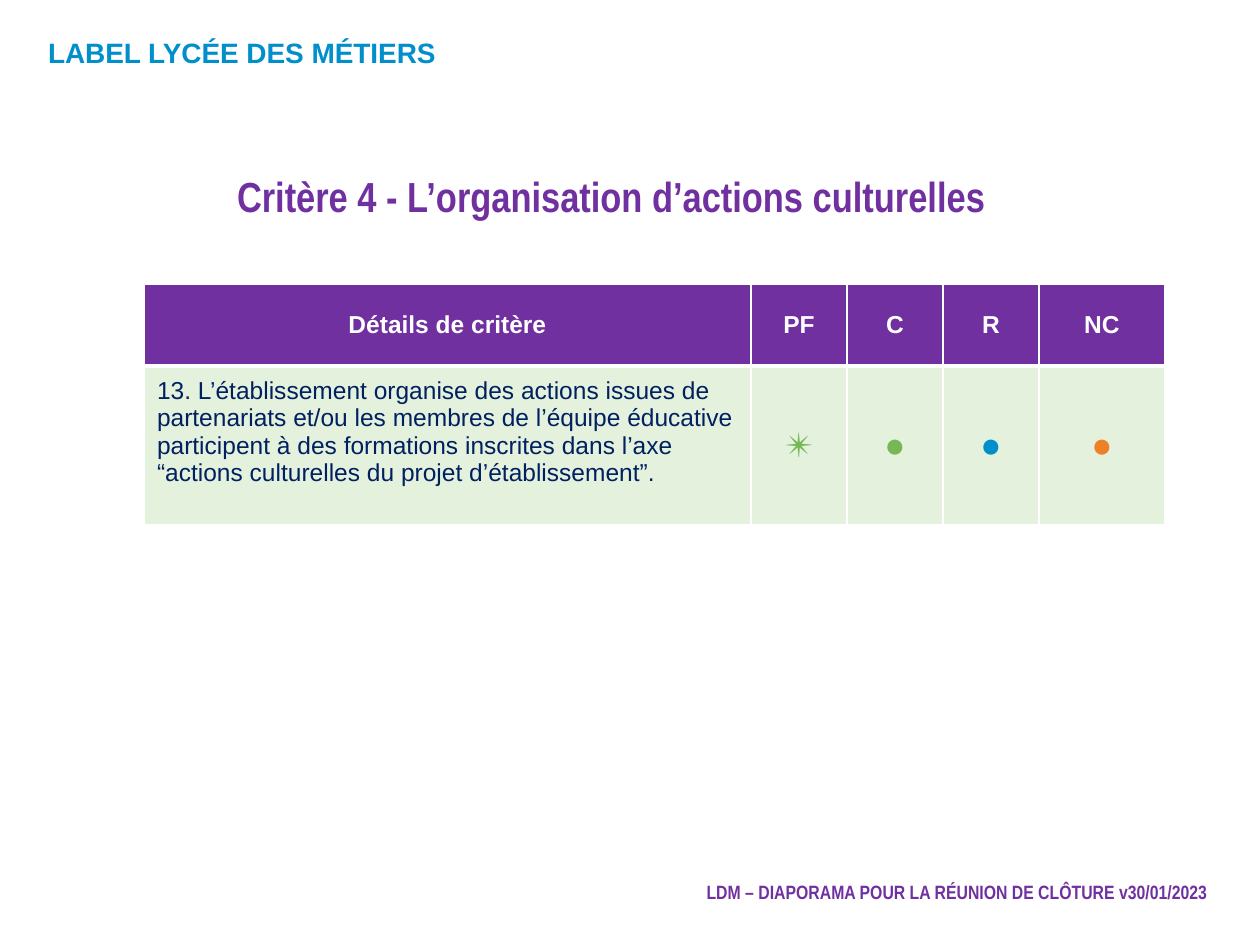
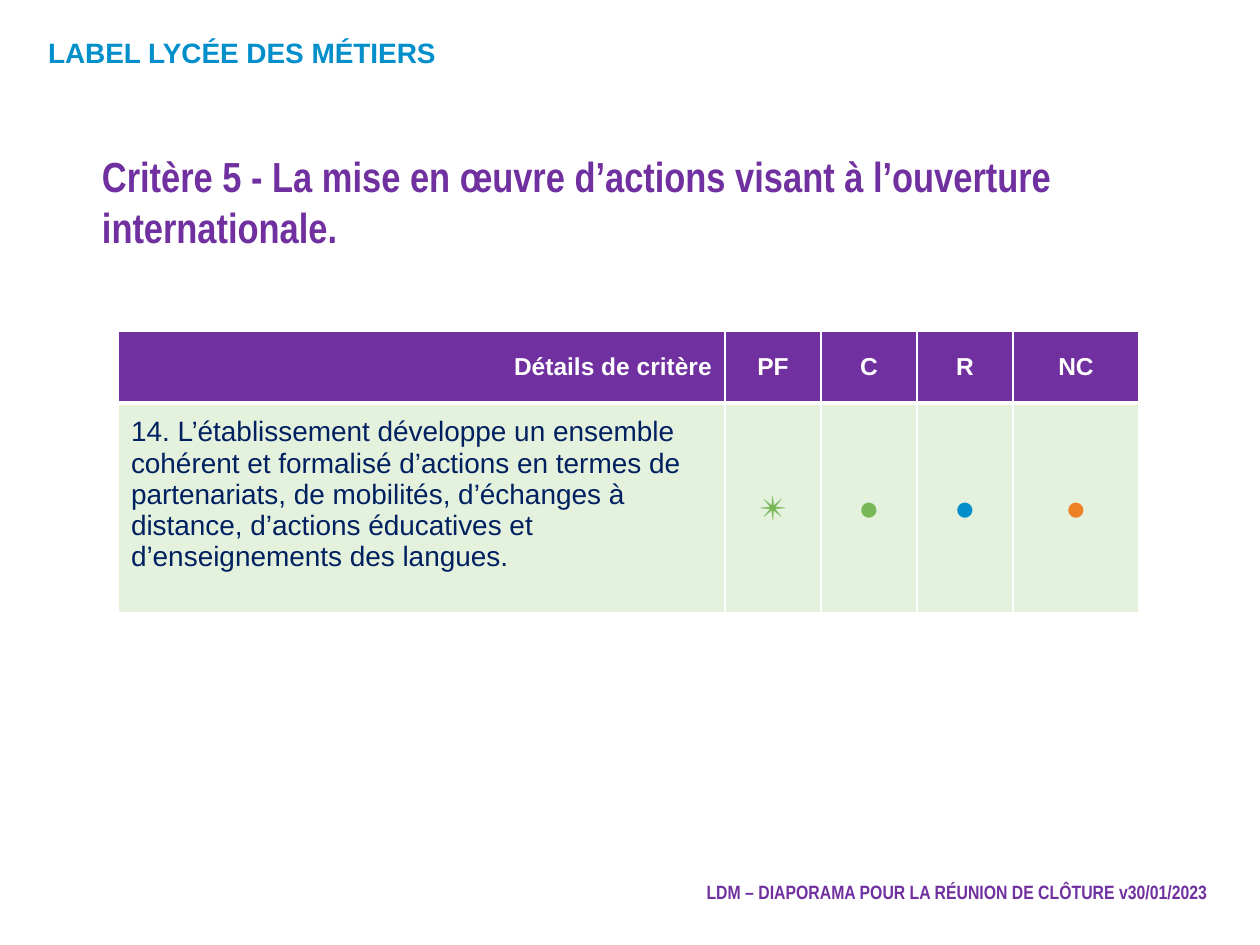
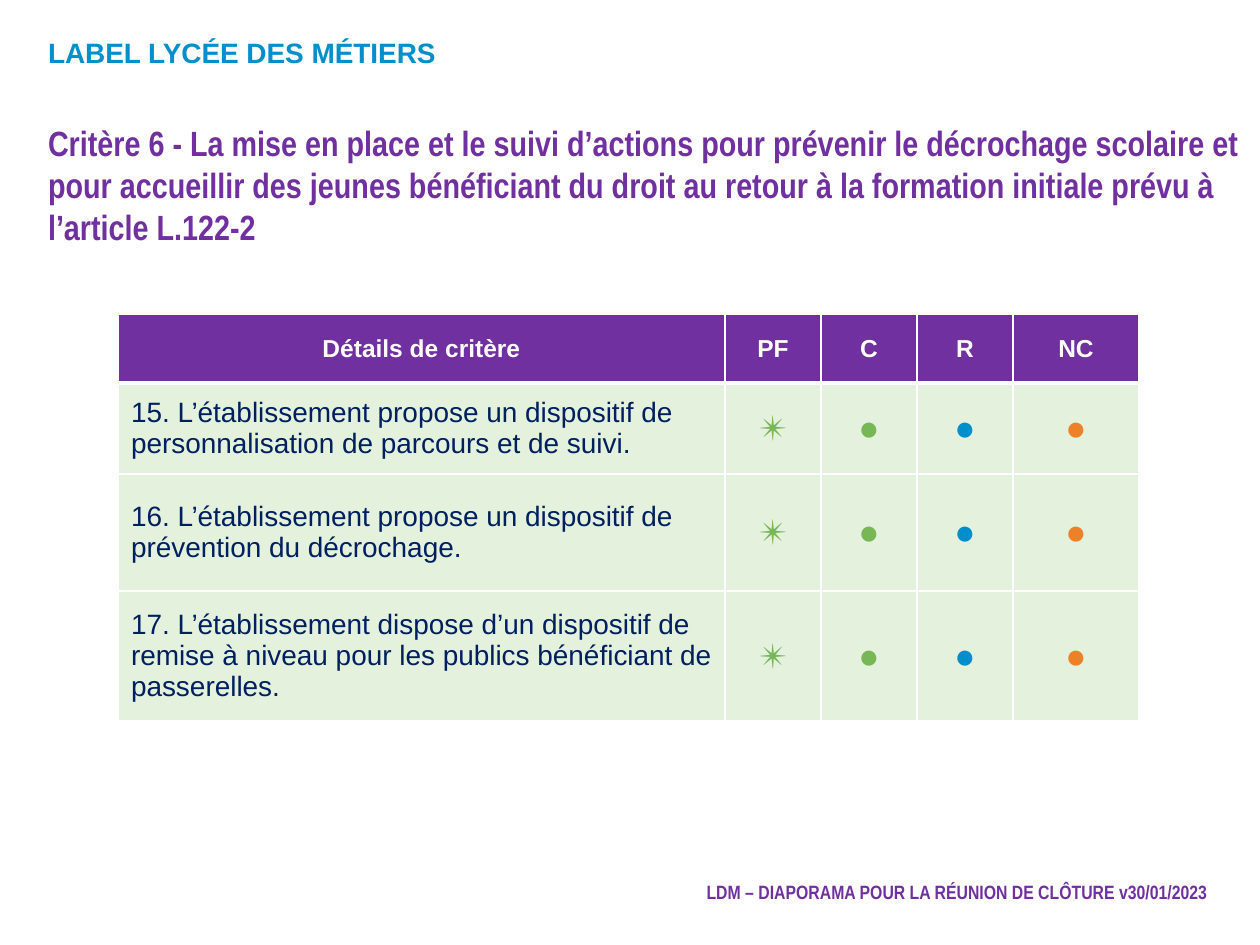
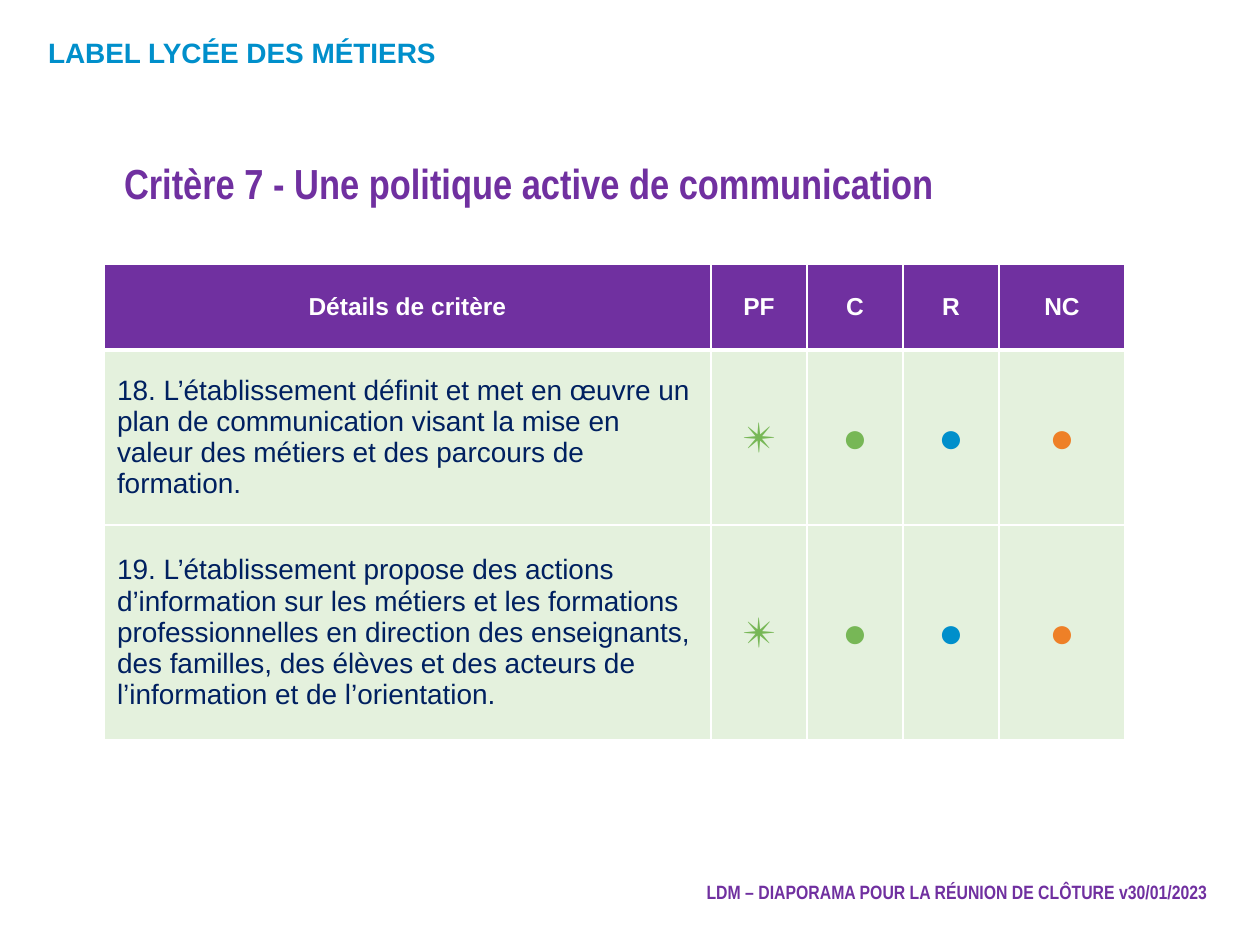
from lxml import etree
from pptx import Presentation
from pptx import util as u
from pptx.dml.color import RGBColor
from pptx.enum import text
from pptx.oxml import ns

# Shared style
PURPLE = RGBColor(0x70, 0x30, 0xA0)
BLUE = RGBColor(0x00, 0x8F, 0xCB)
GREEN = RGBColor(0x77, 0xB7, 0x56)
ORANGE = RGBColor(0xEE, 0x80, 0x27)
NAVY = RGBColor(0x00, 0x20, 0x60)
PALE_GREEN = RGBColor(0xE4, 0xF1, 0xDD)
WHITE = RGBColor(0xFF, 0xFF, 0xFF)

BODY_FONT = "Arial"
NARROW_FONT = "Arial Narrow"
LEFT, CENTER, RIGHT = text.PP_ALIGN.LEFT, text.PP_ALIGN.CENTER, text.PP_ALIGN.RIGHT

PX_PER_INCH = 126
INSET_X, INSET_Y = 13, 6
BRAND = "LABEL LYCÉE DES MÉTIERS"
FOOTER = "LDM – DIAPORAMA POUR LA RÉUNION DE CLÔTURE v30/01/2023"

# Criteria table
COLUMN_WIDTHS = (607, 96, 96, 96, 126)
HEADINGS = ("Détails de critère", "PF", "C", "R", "NC")
RATINGS = (("✴", GREEN), ("●", GREEN), ("●", BLUE), ("●", ORANGE))
THIN, THICK = 1, 3


def px(length):
    return u.Emu(round(length * u.Inches(1) / PX_PER_INCH))


class Deck:
    def __init__(self):
        self.presentation = Presentation()
        self.presentation.slide_width = px(1260)
        self.presentation.slide_height = px(945)
        self.slide = None

    def add_slide(self):
        blank = self.presentation.slide_layouts[6]
        self.slide = self.presentation.slides.add_slide(blank)
        self.label((377, 874, 844, 37), FOOTER, 11, PURPLE, NARROW_FONT, RIGHT)
        self.label((35, 30, 496, 47), BRAND, 16, BLUE)

    def add_text(self, paragraph, words, size, color, font=BODY_FONT, bold=False, align=LEFT):
        paragraph.alignment = align
        run = paragraph.add_run()
        run.text = words
        run.font.name = font
        run.font.size = u.Pt(size)
        run.font.bold = bold
        run.font.color.rgb = color

    def label(self, box, words, size, color, font=BODY_FONT, align=LEFT):
        shape = self.slide.shapes.add_textbox(*map(px, box))
        frame = shape.text_frame
        frame.word_wrap = True
        frame.margin_left = frame.margin_right = px(INSET_X)
        frame.margin_top = frame.margin_bottom = px(INSET_Y)
        self.add_text(frame.paragraphs[0], words, size, color, font, True, align)

    def title(self, box, words, size=24):
        self.label(box, words, size, PURPLE, NARROW_FONT)

    def borders(self, cell, top, bottom):
        properties = cell._tc.get_or_add_tcPr()
        for side, width in (("L", THIN), ("R", THIN), ("T", top), ("B", bottom)):
            line = etree.SubElement(properties, ns.qn(f"a:ln{side}"), w=str(u.Pt(width)))
            fill = etree.SubElement(line, ns.qn("a:solidFill"))
            etree.SubElement(fill, ns.qn("a:srgbClr"), val=str(WHITE))

    def cell(self, cell, lines, size, color, fill, bold=False, align=CENTER,
             top=THIN, bottom=THIN, inset_bottom=INSET_Y):
        self.borders(cell, top, bottom)
        cell.fill.solid()
        cell.fill.fore_color.rgb = fill
        cell.vertical_anchor = text.MSO_ANCHOR.MIDDLE
        cell.margin_left = cell.margin_right = px(INSET_X)
        cell.margin_top, cell.margin_bottom = px(INSET_Y), px(inset_bottom)
        for index, words in enumerate(lines.split("\n")):
            frame = cell.text_frame
            paragraph = frame.add_paragraph() if index else frame.paragraphs[0]
            self.add_text(paragraph, words, size, color, bold=bold, align=align)

    def criteria(self, left, top, heights, details, size=16, rating_size=20,
                 heading_align=CENTER, inset_bottom=INSET_Y):
        table = self.slide.shapes.add_table(
            len(heights), len(COLUMN_WIDTHS), px(left), px(top),
            px(sum(COLUMN_WIDTHS)), px(sum(heights))).table
        table.horz_banding = False
        for column, width in zip(table.columns, COLUMN_WIDTHS):
            column.width = px(width)
        for row, height in zip(table.rows, heights):
            row.height = px(height)

        # Heading row
        for column, heading in enumerate(HEADINGS):
            self.cell(table.cell(0, column), heading, 14, WHITE, PURPLE, True,
                      CENTER if column else heading_align, bottom=THICK)

        # One row per detail, followed by its rating marks
        for row, detail in enumerate(details, 1):
            edge = THICK if row == 1 else THIN
            self.cell(table.cell(row, 0), detail, size, NAVY, PALE_GREEN,
                      align=LEFT, top=edge, inset_bottom=inset_bottom)
            for column, (mark, color) in enumerate(RATINGS, 1):
                self.cell(table.cell(row, column), mark, rating_size, color,
                          PALE_GREEN, top=edge)


def main():
    deck = Deck()

    # Criterion 4
    deck.add_slide()
    deck.criteria(144, 284, (82, 159), [
        "13. L’établissement organise des actions issues de partenariats et/ou les "
        "membres de l’équipe éducative participent à des formations inscrites dans "
        "l’axe “actions culturelles du projet d’établissement”.",
    ], size=14, inset_bottom=33)
    deck.title((224, 165, 1040, 103), "Critère 4 - L’organisation d’actions culturelles")

    # Criterion 5
    deck.add_slide()
    deck.criteria(118, 331, (72, 210), [
        "14. L’établissement développe un ensemble cohérent et formalisé d’actions "
        "en termes de partenariats, de mobilités, d’échanges à distance, d’actions "
        "éducatives et d’enseignements des langues.",
    ], heading_align=RIGHT, inset_bottom=33)
    deck.title((89, 145, 1171, 103),
               "Critère 5 - La mise en œuvre d’actions visant à l’ouverture internationale.")

    # Criterion 6
    deck.add_slide()
    deck.criteria(118, 314, (69, 91, 117, 130), [
        "15. L’établissement propose un dispositif de personnalisation de parcours "
        "et de suivi.",
        "16. L’établissement propose un dispositif de prévention du décrochage.",
        "17. L’établissement dispose d’un dispositif de remise à niveau pour les "
        "publics bénéﬁciant de\npasserelles.",
    ])
    deck.title((35, 116, 1268, 149),
               "Critère 6 - La mise en place et le suivi d’actions pour prévenir le "
               "décrochage scolaire et pour accueillir des jeunes bénéﬁciant du droit au "
               "retour à la formation initiale prévu à l’article L.122-2", 20)

    # Criterion 7
    deck.add_slide()
    deck.criteria(104, 264, (86, 175, 215), [
        "18. L’établissement déﬁnit et met en œuvre un plan de communication visant "
        "la mise en valeur des métiers et des parcours de formation.",
        "19. L’établissement propose des actions d’information sur les métiers et les "
        "formations professionnelles en direction des enseignants, des familles, des "
        "élèves et des acteurs de l’information et de l’orientation.",
    ], rating_size=24)
    deck.title((111, 152, 1040, 103), "Critère 7 - Une politique active de communication")

    deck.presentation.save("out.pptx")


if __name__ == "__main__":
    main()
